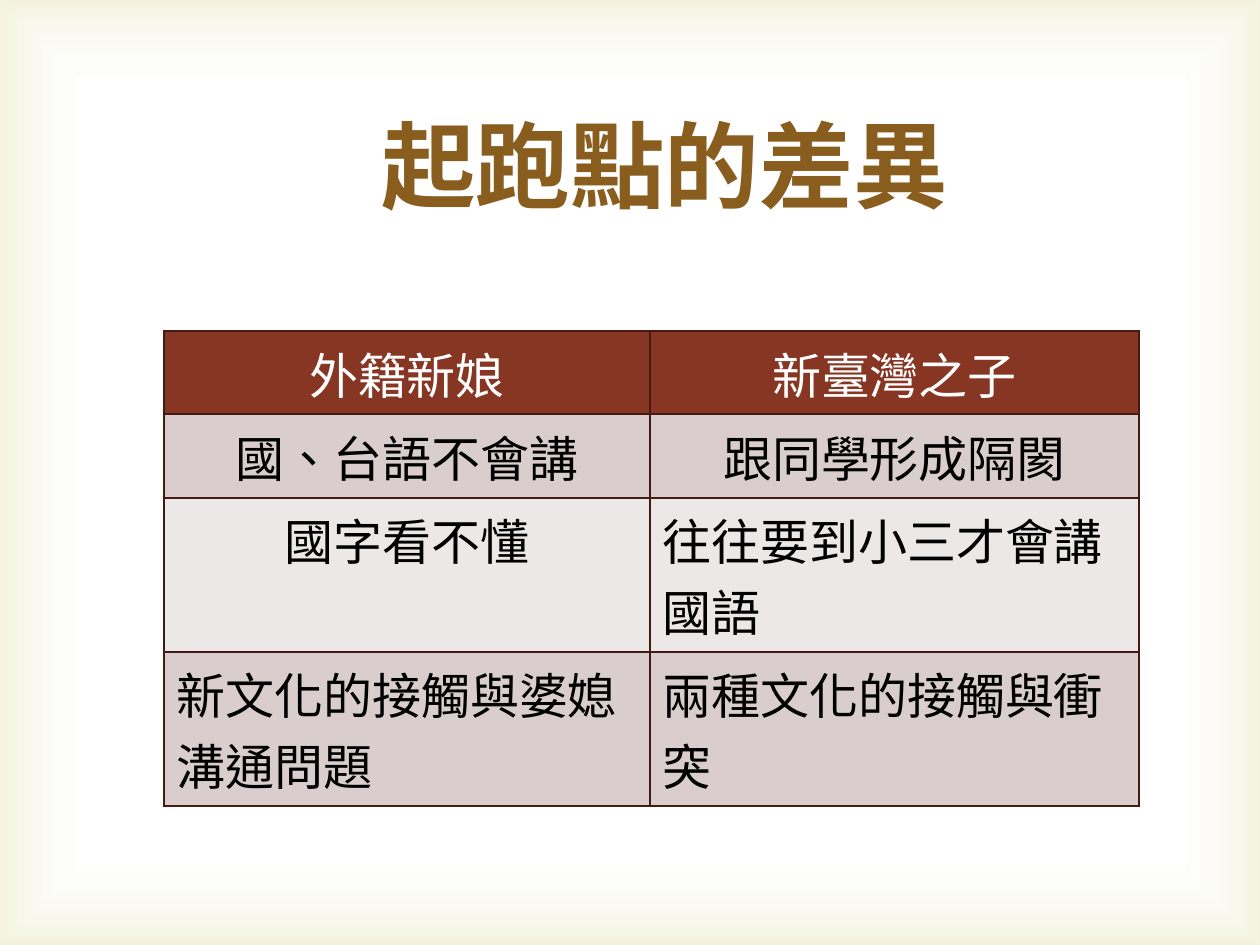
import dataclasses

import pptx
import pptx.dml.color
import pptx.enum.shapes
import pptx.enum.text
import pptx.oxml
import pptx.oxml.ns
import pptx.util

EMU_PER_PX = 914400 / 126


@dataclasses.dataclass(frozen=True)
class Theme:
    font: str = "Cambria"
    title_size: int = 54
    table_size: int = 28
    title: str = "895D1D"
    header_text: str = "FFFFFF"
    body_text: str = "000000"
    header_fill: str = "873624"
    bands: tuple = ("D9CECD", "EDE8E8")
    border: str = "441B12"
    border_width: float = 1.5
    glow_inner: str = "FFFFFF"
    glow_outer: str = "D1CA75"


THEME = Theme()
CENTER = pptx.enum.text.PP_ALIGN.CENTER
LEFT = pptx.enum.text.PP_ALIGN.LEFT
ROWS = [
    [("外籍新娘", CENTER), ("新臺灣之子", CENTER)],
    [("國、台語不會講", CENTER), ("跟同學形成隔閡", CENTER)],
    [("國字看不懂", CENTER), ("往往要到小三才會講國語", LEFT)],
    [("新文化的接觸與婆媳溝通問題", LEFT), ("兩種文化的接觸與衝突", LEFT)],
]
COLUMN_WIDTHS = [486, 489]
ROW_HEIGHTS = [83, 84, 154, 154]


def px(length):
    return pptx.util.Emu(round(length * EMU_PER_PX))


def rgb(color):
    return pptx.dml.color.RGBColor.from_string(color)


def write(frame, text, size, color, align, bold=False):
    frame.text = text
    para = frame.paragraphs[0]
    para.alignment = align
    span = para.runs[0]
    span.font.name = THEME.font
    span.font.size = pptx.util.Pt(size)
    span.font.bold = bold
    span.font.color.rgb = rgb(color)
    span._r.get_or_add_rPr().set("lang", "zh-TW")


def add_glow(page, left, top, width, height):
    glow = page.shapes.add_shape(
        pptx.enum.shapes.MSO_SHAPE.RECTANGLE, px(left), px(top), px(width), px(height)
    )
    glow.shadow.inherit = False
    glow.line.fill.background()
    glow.fill.background()
    stops = "".join(
        f'<a:gs pos="{position * 1000}"><a:srgbClr val="{color}">'
        f'<a:alpha val="{alpha * 1000}"/></a:srgbClr></a:gs>'
        for position, color, alpha in [(83, THEME.glow_inner, 11), (100, THEME.glow_outer, 23)]
    )
    gradient = pptx.oxml.parse_xml(
        f'<a:gradFill {pptx.oxml.ns.nsdecls("a")} rotWithShape="1"><a:gsLst>{stops}</a:gsLst>'
        '<a:path path="rect"><a:fillToRect l="50000" t="50000" r="50000" b="50000"/></a:path>'
        "</a:gradFill>"
    )
    properties = glow._element.spPr
    properties.replace(properties.find(pptx.oxml.ns.qn("a:noFill")), gradient)


def add_title(page, left, top, width, height):
    box = page.shapes.add_textbox(px(left), px(top), px(width), px(height))
    frame = box.text_frame
    frame.word_wrap = True
    frame.vertical_anchor = pptx.enum.text.MSO_ANCHOR.MIDDLE
    write(frame, "起跑點的差異", THEME.title_size, THEME.title, CENTER, bold=True)


def add_borders(cell):
    properties = cell._tc.get_or_add_tcPr()
    width = pptx.util.Pt(THEME.border_width)
    for index, side in enumerate("LRTB"):
        line = pptx.oxml.parse_xml(
            f'<a:ln{side} {pptx.oxml.ns.nsdecls("a")} w="{width}"><a:solidFill>'
            f'<a:srgbClr val="{THEME.border}"/></a:solidFill></a:ln{side}>'
        )
        properties.insert(index, line)


def add_comparison(page, left, top):
    table = page.shapes.add_table(
        len(ROWS), len(COLUMN_WIDTHS), px(left), px(top),
        px(sum(COLUMN_WIDTHS)), px(sum(ROW_HEIGHTS)),
    ).table
    for column, width in zip(table.columns, COLUMN_WIDTHS):
        column.width = px(width)
    for row_index, (row, height) in enumerate(zip(table.rows, ROW_HEIGHTS)):
        row.height = px(height)
        header = row_index == 0
        fill = THEME.header_fill if header else THEME.bands[(row_index - 1) % 2]
        color = THEME.header_text if header else THEME.body_text
        for cell, (text, align) in zip(row.cells, ROWS[row_index]):
            write(cell.text_frame, text, THEME.table_size, color, align)
            cell.fill.solid()
            cell.fill.fore_color.rgb = rgb(fill)
            add_borders(cell)


def main():
    deck = pptx.Presentation()
    deck.slide_width, deck.slide_height = px(1260), px(945)
    page = deck.slides.add_slide(deck.slide_layouts[6])
    add_glow(page, 0, 0, 1260, 945)
    add_title(page, 124, 85, 1082, 158)
    add_comparison(page, 164, 331)
    deck.save("out.pptx")


if __name__ == "__main__":
    main()
